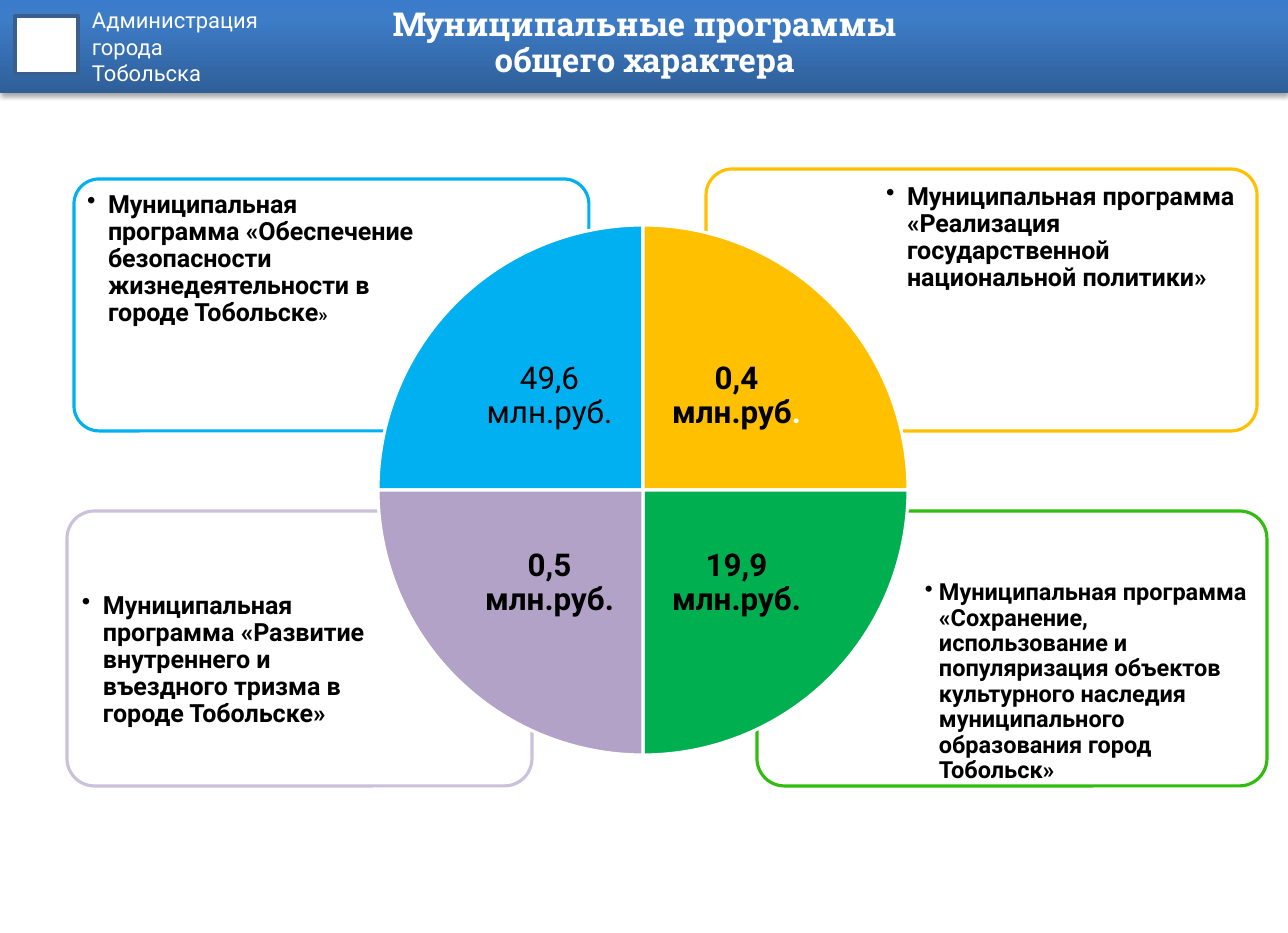
from copy import deepcopy
from dataclasses import dataclass

from lxml.etree import SubElement
from pptx import Presentation
from pptx.dml.color import RGBColor
from pptx.enum.shapes import MSO_SHAPE as Preset
from pptx.enum.text import MSO_ANCHOR as Anchor, MSO_AUTO_SIZE as AutoSize, PP_ALIGN as Align
from pptx.oxml.ns import qn
from pptx.shapes.autoshape import Shape
from pptx.slide import Slide
from pptx.text.text import TextFrame
from pptx.util import Pt

EMU_PER_PX = 8106
SLIDE_WIDTH, SLIDE_HEIGHT = 1288, 933
CENTER_X, CENTER_Y = 643, 490
WEDGE_SIZE, LABEL_SIZE = 265, 187

Box = tuple[int, int, int, int]


@dataclass(frozen=True)
class Theme:
    body_font: str = "Roboto"
    title_font: str = "Roboto Slab"
    white: str = "FFFFFF"
    black: str = "000000"
    emblem_line: str = "3A5F8C"
    header_stops: tuple[tuple[float, str], ...] = ((0, "2F5F99"), (0.8, "3D7CC7"), (1, "3A7CCB"))
    header_size: int = 14
    title_size: int = 21
    value_size: int = 20
    line_width: int = 2
    line_spacing: float = 0.9


THEME = Theme()


@dataclass(frozen=True)
class TextRun:
    text: str
    size: int
    bold: bool = True
    color: str = THEME.black


@dataclass(frozen=True)
class Card:
    frame: Box
    text_box: Box
    line: str
    runs: tuple[TextRun, ...]
    indent: int = 21
    inset: int = 8
    anchor: Anchor = Anchor.TOP


@dataclass(frozen=True)
class Wedge:
    column: int
    row: int
    rotation: int
    fill: str
    runs: tuple[TextRun, ...]


CARDS = (
    Card((757, 511, 510, 275), (918, 585, 340, 194), "31BC10",
         (TextRun("Муниципальная программа «Сохранение, использование и популяризация объектов "
                  "культурного наследия муниципального образования город Тобольск»", 15),),
         indent=14, inset=7, anchor=Anchor.MIDDLE),
    Card((67, 511, 465, 275), (74, 585, 310, 194), "CCC1DA",
         (TextRun("Муниципальная программа «Развитие внутреннего и въездного тризма "
                  "в городе Тобольске»", 16),)),
    Card((706, 169, 551, 262), (878, 176, 374, 184), "FFC000",
         (TextRun("Муниципальная программа «Реализация государственной национальной политики»", 16),)),
    Card((74, 179, 515, 252), (79, 184, 351, 178), "00B0F0",
         (TextRun("Муниципальная программа «Обеспечение безопасности жизнедеятельности "
                  "в городе Тобольске", 16), TextRun("»", 12))),
)

WEDGES = (
    Wedge(0, 0, 0, "00B0F0", (TextRun("49,6 млн.руб.", THEME.value_size, bold=False),)),
    Wedge(1, 0, 90, "FFC000", (TextRun("0,4 млн.руб", THEME.value_size),
                               TextRun(".", THEME.value_size, color=THEME.white))),
    Wedge(1, 1, 180, "00B050", (TextRun("19,9 млн.руб.", THEME.value_size),)),
    Wedge(0, 1, 270, "B3A2C7", (TextRun("0,5 млн.руб.", THEME.value_size),)),
)


def px(value: int) -> int:
    return value * EMU_PER_PX


def rgb(color: str) -> RGBColor:
    return RGBColor.from_string(color)


def add_preset(slide: Slide, preset: Preset, box: Box, fill: str, line: str) -> Shape:
    shape = slide.shapes.add_shape(preset, *map(px, box))
    shape.shadow.inherit = False
    shape.fill.solid()
    shape.fill.fore_color.rgb = rgb(fill)
    shape.line.color.rgb = rgb(line)
    shape.line.width = Pt(THEME.line_width)
    return shape


def set_frame(frame: TextFrame, side: int, top: int, anchor: Anchor) -> None:
    frame.word_wrap = True
    frame.auto_size = AutoSize.NONE
    frame.vertical_anchor = anchor
    frame.margin_left = frame.margin_right = px(side)
    frame.margin_top = frame.margin_bottom = px(top)


def add_text(slide: Slide, box: Box, runs: tuple[TextRun, ...], inset: int, anchor: Anchor,
             align: Align = Align.LEFT, indent: int = 0) -> None:
    """Add a one-paragraph text box; a positive indent makes it a bullet."""
    frame = slide.shapes.add_textbox(*map(px, box)).text_frame
    set_frame(frame, inset, inset, anchor)
    paragraph = frame.paragraphs[0]
    paragraph.alignment = align
    paragraph.line_spacing = THEME.line_spacing
    if indent:
        properties = paragraph._p.get_or_add_pPr()
        properties.set("marL", str(px(indent)))
        properties.set("indent", str(-px(indent)))
        SubElement(properties, qn("a:buChar"), char="•")
    paragraph.font.name = THEME.body_font
    for item in runs:
        run = paragraph.add_run()
        run.text = item.text
        run.font.name = THEME.body_font
        run.font.size = Pt(item.size)
        run.font.bold = item.bold
        run.font.color.rgb = rgb(item.color)


def add_header(slide: Slide) -> None:
    band = add_preset(slide, Preset.RECTANGLE, (0, 0, SLIDE_WIDTH, 93), THEME.white, THEME.white)
    band.line.fill.background()
    band.fill.gradient()
    band.fill.gradient_angle = 90
    properties = band.element.spPr
    stop_list = properties.find(".//" + qn("a:gsLst"))
    stop_list.append(deepcopy(stop_list[-1]))
    for stop, (position, color) in zip(band.fill.gradient_stops, THEME.header_stops):
        stop.position = position
        stop.color.rgb = rgb(color)
    shadow = SubElement(properties.find(qn("a:effectLst")), qn("a:outerShdw"),
                        blurRad=str(Pt(3.1)), dist=str(Pt(1.8)), dir="5400000", rotWithShape="0")
    shadow_color = SubElement(shadow, qn("a:srgbClr"), val=THEME.black)
    SubElement(shadow_color, qn("a:alpha"), val="35000")

    add_preset(slide, Preset.RECTANGLE, (15, 16, 63, 58), THEME.white, THEME.emblem_line)
    frame = slide.shapes.add_textbox(*map(px, (80, 0, 302, 120))).text_frame
    set_frame(frame, 12, 7, Anchor.TOP)
    frame.text = "Администрация\nгорода\nТобольска"
    for paragraph in frame.paragraphs:
        paragraph.font.name = THEME.body_font
        paragraph.font.size = Pt(THEME.header_size)
        paragraph.font.color.rgb = rgb(THEME.white)


def place_title(slide: Slide) -> None:
    """Fill the title placeholder and bring it in front of the header band."""
    title = slide.shapes.title
    title.element.getparent().append(title.element)
    title.left, title.top, title.width, title.height = map(px, (262, 0, 765, 88))
    set_frame(title.text_frame, 12, 7, Anchor.MIDDLE)
    title.text_frame.text = "Муниципальные программы\vобщего характера"
    paragraph = title.text_frame.paragraphs[0]
    paragraph.alignment = Align.CENTER
    paragraph.line_spacing = THEME.line_spacing
    paragraph.font.name = THEME.title_font
    paragraph.font.size = Pt(THEME.title_size)
    paragraph.font.bold = True
    paragraph.font.color.rgb = rgb(THEME.white)


def add_card(slide: Slide, card: Card) -> None:
    frame = add_preset(slide, Preset.ROUNDED_RECTANGLE, card.frame, THEME.white, card.line)
    frame.adjustments[0] = 0.1
    add_text(slide, card.text_box, card.runs, card.inset, card.anchor, indent=card.indent)


def add_wedge(slide: Slide, wedge: Wedge) -> None:
    def quadrant(size: int) -> Box:
        return (CENTER_X - size * (1 - wedge.column), CENTER_Y - size * (1 - wedge.row), size, size)

    shape = add_preset(slide, Preset.PIE_WEDGE, quadrant(WEDGE_SIZE), wedge.fill, THEME.white)
    shape.rotation = wedge.rotation
    add_text(slide, quadrant(LABEL_SIZE), wedge.runs, 18, Anchor.MIDDLE, Align.CENTER)


def main() -> None:
    presentation = Presentation()
    presentation.slide_width, presentation.slide_height = px(SLIDE_WIDTH), px(SLIDE_HEIGHT)
    slide = presentation.slides.add_slide(presentation.slide_layouts[5])
    add_header(slide)
    place_title(slide)
    for card in CARDS:
        add_card(slide, card)
    for wedge in WEDGES:
        add_wedge(slide, wedge)
    presentation.save("out.pptx")


if __name__ == "__main__":
    main()
